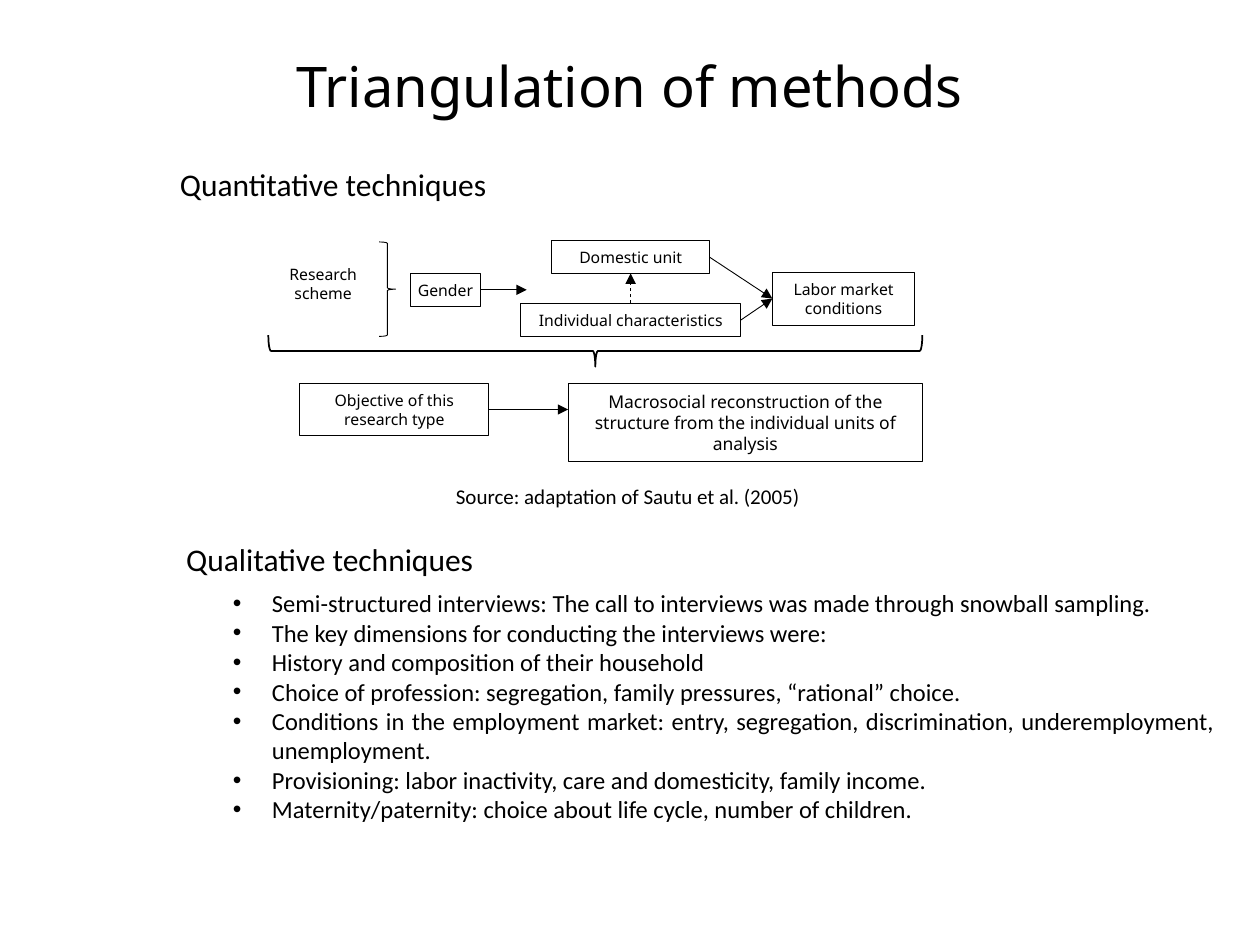
from dataclasses import dataclass
from typing import Optional

from lxml import etree
from pptx import Presentation
from pptx.dml.color import RGBColor
from pptx.enum.dml import MSO_LINE
from pptx.enum.shapes import MSO_CONNECTOR, MSO_SHAPE
from pptx.enum.text import MSO_ANCHOR, MSO_AUTO_SIZE, PP_ALIGN
from pptx.oxml.ns import qn
from pptx.util import Inches, Pt

COLORS = {"ink": "000000"}
DIAGRAM_FONT, BODY_FONT = "Noto Sans", "Calibri"
LEFT, CENTER, JUSTIFY = PP_ALIGN.LEFT, PP_ALIGN.CENTER, PP_ALIGN.JUSTIFY
RECTANGLE = MSO_SHAPE.RECTANGLE
RIGHT_BRACE, LEFT_BRACE = MSO_SHAPE.RIGHT_BRACE, MSO_SHAPE.LEFT_BRACE
STRAIGHT, DASH = MSO_CONNECTOR.STRAIGHT, MSO_LINE.DASH
TOP, GROW, FIXED = MSO_ANCHOR.TOP, MSO_AUTO_SIZE.SHAPE_TO_FIT_TEXT, MSO_AUTO_SIZE.NONE
TOP_SIDE, LEFT_SIDE, BOTTOM_SIDE, RIGHT_SIDE = range(4)
INDENT = 0.31
INSET, NARROW_INSET = 0.06, 0.03


@dataclass
class Label:
    text: str
    left: float
    top: float
    width: float
    height: float
    size: float
    font: str = BODY_FONT
    align: PP_ALIGN = LEFT
    wrap: bool = False
    side_inset: Optional[float] = None


@dataclass
class Node:
    text: str
    left: float
    top: float
    width: float
    height: float
    size: float = 9
    wrap: bool = True
    side_inset: float = INSET

    def as_label(self) -> Label:
        return Label(self.text, self.left, self.top, self.width, self.height,
                     self.size, DIAGRAM_FONT, CENTER, self.wrap, self.side_inset)


@dataclass
class Arrow:
    """Runs from a side of one node to a side of another, or to a free point."""
    source: str
    source_side: int
    target: Optional[str] = None
    target_side: int = LEFT_SIDE
    end: tuple[float, float] = (0, 0)
    dashed: bool = False


@dataclass
class Brace:
    shape: MSO_SHAPE
    left: float
    top: float
    width: float
    height: float
    weight: float
    rotation: float = 0


LABELS = [
    Label("Quantitative techniques", 1.33, 1.26, 2.67, 0.4, 18),
    Label("Research scheme", 2.13, 2.04, 0.87, 0.42, 9, DIAGRAM_FONT, CENTER, True, INSET),
    Label("Source: adaptation of Sautu et al. (2005)", 3.52, 3.79, 2.96, 0.3, 12),
    Label("Qualitative techniques", 1.38, 4.24, 2.56, 0.4, 18),
]
NODES = {
    "domestic": Node("Domestic unit", 4.38, 1.91, 1.25, 0.26),
    "individual": Node("Individual characteristics", 4.13, 2.41, 1.75, 0.26),
    "gender": Node("Gender", 3.26, 2.17, 0.55, 0.26, wrap=False, side_inset=NARROW_INSET),
    "labor": Node("Labor market conditions", 6.13, 2.16, 1.13, 0.42),
    "objective": Node("Objective of this research type", 2.38, 3.04, 1.5, 0.42),
    "macrosocial": Node("Macrosocial reconstruction of the structure from the "
                        "individual units of analysis", 4.51, 3.04, 2.81, 0.62, size=10),
}
ARROWS = [
    Arrow("individual", TOP_SIDE, "domestic", BOTTOM_SIDE, dashed=True),
    Arrow("objective", RIGHT_SIDE, end=(4.51, 3.25)),
    Arrow("gender", RIGHT_SIDE, end=(4.18, 2.3)),
    Arrow("domestic", RIGHT_SIDE, "labor"),
    Arrow("individual", RIGHT_SIDE, "labor"),
]
BRACES = [
    Brace(RIGHT_BRACE, 3.01, 1.92, 0.13, 0.75, 0.5),
    Brace(LEFT_BRACE, 4.6, 0.19, 0.25, 5.19, 1, rotation=270),
]
INTERVIEW_POINTS = [
    "Semi-structured interviews: The call to interviews was made through snowball sampling.",
    "The key dimensions for conducting the interviews were:",
    "History and composition of their household",
    "Choice of profession: segregation, family pressures, “rational” choice.",
    "Conditions in the employment market: entry, segregation, discrimination, "
    "underemployment, unemployment.",
    "Provisioning: labor inactivity, care and domesticity, family income.",
    "Maternity/paternity: choice about life cycle, number of children.",
]


def ink() -> RGBColor:
    return RGBColor.from_string(COLORS["ink"])


def bounds(item) -> list:
    return [Inches(n) for n in (item.left, item.top, item.width, item.height)]


def style_paragraph(para, font: str, size: float, align: PP_ALIGN) -> None:
    para.alignment = align
    para.font.name, para.font.size = font, Pt(size)
    para.font.color.rgb = ink()


def write_label(frame, label: Label) -> None:
    frame.text = label.text
    frame.word_wrap, frame.auto_size = label.wrap, GROW
    frame.vertical_anchor = TOP
    if label.side_inset is not None:
        frame.margin_left = frame.margin_right = Inches(label.side_inset)
        frame.margin_top = frame.margin_bottom = Inches(INSET)
    style_paragraph(frame.paragraphs[0], label.font, label.size, label.align)


def add_outline(slide, kind: MSO_SHAPE, item, weight: float):
    """Add an unfilled preset shape with an ink outline."""
    shape = slide.shapes.add_shape(kind, *bounds(item))
    shape.shadow.inherit = False
    shape.fill.background()
    shape.line.color.rgb = ink()
    shape.line.width = Pt(weight)
    return shape


def add_node(slide, node: Node):
    box = add_outline(slide, RECTANGLE, node, 0.5)
    write_label(box.text_frame, node.as_label())
    return box


def add_arrow(slide, arrow: Arrow, boxes: dict) -> None:
    end = [Inches(n) for n in arrow.end]
    line = slide.shapes.add_connector(STRAIGHT, *end, *end)
    line.begin_connect(boxes[arrow.source], arrow.source_side)
    if arrow.target:
        line.end_connect(boxes[arrow.target], arrow.target_side)
    line.line.color.rgb = ink()
    line.line.width = Pt(0.5)
    if arrow.dashed:
        line.line.dash_style = DASH
    properties = line.line._get_or_add_ln()
    etree.SubElement(properties, qn("a:tailEnd"), type="triangle")
    etree.SubElement(properties.getparent(), qn("a:effectLst"))


def add_bullets(slide, points: list[str]) -> None:
    box = slide.shapes.add_textbox(Inches(1.75), Inches(4.62), Inches(7.99), Inches(2.29))
    frame = box.text_frame
    frame.word_wrap, frame.auto_size = True, GROW
    frame.text = "\n".join(points)
    for para in frame.paragraphs:
        properties = para._p.get_or_add_pPr()
        properties.set("marL", str(Inches(INDENT)))
        properties.set("indent", str(-Inches(INDENT)))
        etree.SubElement(properties, qn("a:buFont"), typeface="Arial")
        etree.SubElement(properties, qn("a:buChar"), char="•")
        style_paragraph(para, BODY_FONT, 14, JUSTIFY)


def main() -> None:
    deck = Presentation()
    deck.slide_width, deck.slide_height = Inches(10), Inches(7.5)
    slide = deck.slides.add_slide(deck.slide_layouts[5])

    heading = Label("Triangulation of methods", 2.13, 0.36, 5.74, 0.64, 32, DIAGRAM_FONT, CENTER)
    title = slide.shapes.title
    title.left, title.top, title.width, title.height = bounds(heading)
    write_label(title.text_frame, heading)
    title.text_frame.auto_size = FIXED

    for label in LABELS:
        write_label(slide.shapes.add_textbox(*bounds(label)).text_frame, label)
    boxes = {name: add_node(slide, node) for name, node in NODES.items()}
    for brace in BRACES:
        add_outline(slide, brace.shape, brace, brace.weight).rotation = brace.rotation
    for arrow in ARROWS:
        add_arrow(slide, arrow, boxes)
    add_bullets(slide, INTERVIEW_POINTS)
    deck.save("out.pptx")


if __name__ == "__main__":
    main()
